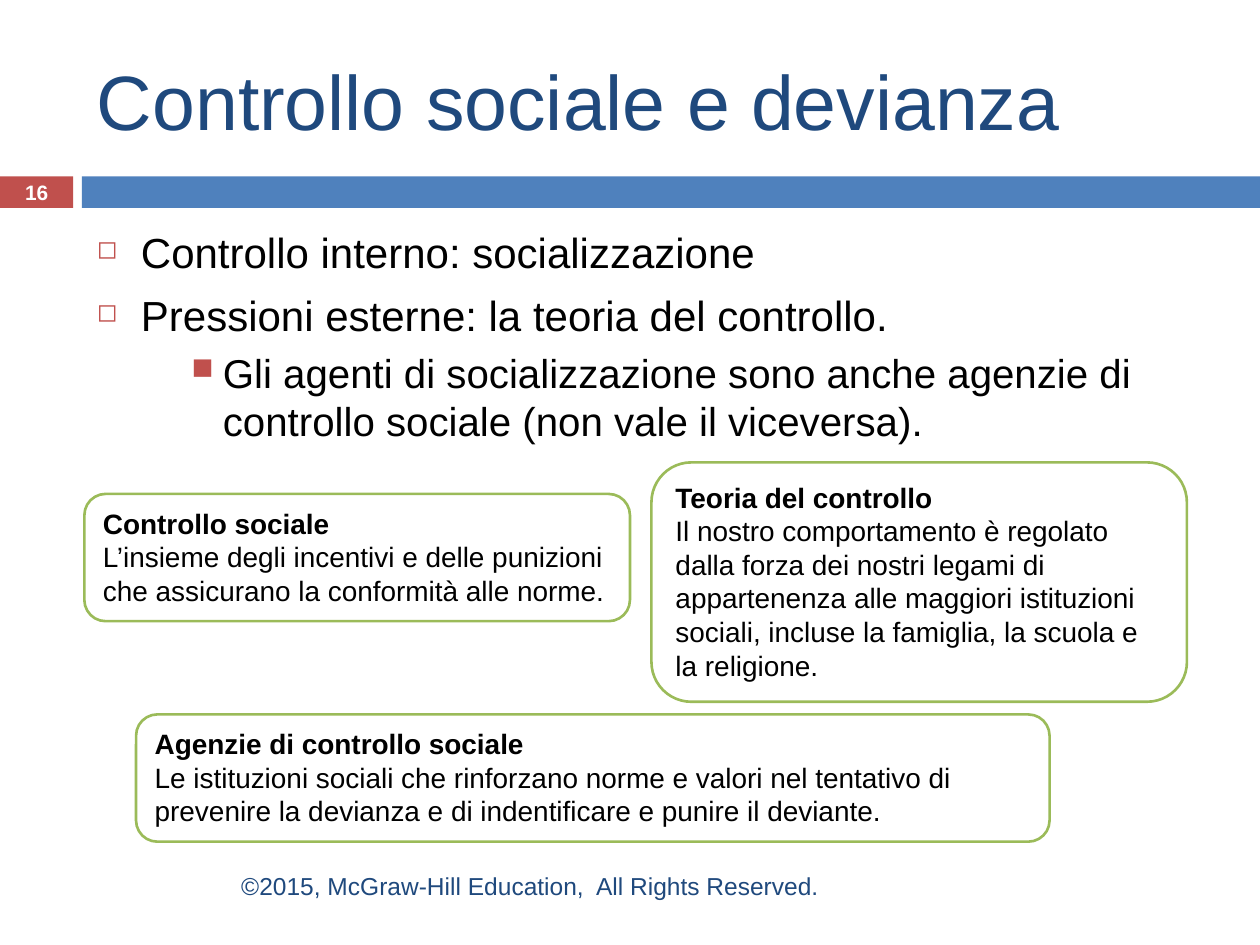
from lxml.etree import SubElement
from pptx import Presentation
from pptx.dml.color import RGBColor
from pptx.enum.shapes import MSO_SHAPE
from pptx.enum.text import MSO_ANCHOR, MSO_AUTO_SIZE, PP_ALIGN
from pptx.oxml.ns import qn
from pptx.util import Inches, Pt

COLORS = {
    "red": "C0504D",
    "blue": "4F81BD",
    "navy": "1F497D",
    "green": "9BBB59",
    "black": "000000",
    "white": "FFFFFF",
}

POINTS = [
    ("Controllo interno: socializzazione", 0),
    ("Pressioni esterne: la teoria del controllo.", 0),
    ("Gli agenti di socializzazione sono anche agenzie di controllo sociale "
     "(non vale il viceversa).", 2),
]

LEVELS = {
    0: {"left": 0.35, "hang": 0.35, "gap": 7, "mark": "◻", "scale": 60, "size": 24},
    2: {"left": 1, "hang": 0.25, "gap": 5, "mark": "■", "scale": 75, "size": 23},
}

CARDS = [
    ((0.67, 3.92, 4.33, 1.01), "Controllo sociale",
     "L’insieme degli incentivi e delle punizioni che assicurano la "
     "conformità alle norme."),
    ((1.08, 5.67, 7.25, 1.01), "Agenzie di controllo sociale",
     "Le istituzioni sociali che rinforzano norme e valori nel tentativo di "
     "prevenire la devianza e di indentificare e punire il deviante."),
    ((5.17, 3.67, 4.25, 1.9), "Teoria del controllo",
     "Il nostro comportamento è regolato dalla forza dei nostri legami di "
     "appartenenza alle maggiori istituzioni sociali, incluse la famiglia, "
     "la scuola e la religione."),
]


def color(name):
    return RGBColor.from_string(COLORS[name])


def style(para, size, tint, bold=False):
    for run in para.runs:
        run.font.name = "Arial"
        run.font.size = Pt(size)
        run.font.bold = bold
        run.font.color.rgb = color(tint)


def add_box(slide, area):
    frame = slide.shapes.add_textbox(*map(Inches, area)).text_frame
    frame.word_wrap = True
    return frame


def add_label(slide, area, text, size, tint, align=PP_ALIGN.LEFT, bold=False):
    frame = add_box(slide, area)
    frame.vertical_anchor = MSO_ANCHOR.MIDDLE
    frame.text = text
    para = frame.paragraphs[0]
    para.alignment = align
    style(para, size, tint, bold)


def add_shape(slide, kind, area, fill, line=None):
    shape = slide.shapes.add_shape(kind, *map(Inches, area))
    shape.shadow.inherit = False
    shape.fill.solid()
    shape.fill.fore_color.rgb = color(fill)
    if line:
        shape.line.color.rgb = color(line)
        shape.line.width = Pt(1.5)
    else:
        shape.line.fill.background()
    return shape


def add_mark(para, level):
    props = para._p.get_or_add_pPr()
    props.set("marL", str(Inches(level["left"])))
    props.set("indent", str(-Inches(level["hang"])))
    tint = SubElement(props, qn("a:buClr"))
    SubElement(tint, qn("a:srgbClr"), val=COLORS["red"])
    SubElement(props, qn("a:buSzPct"), val=str(level["scale"] * 1000))
    SubElement(props, qn("a:buChar"), char=level["mark"])


def add_points(slide, area):
    frame = add_box(slide, area)
    for i, (text, depth) in enumerate(POINTS):
        para = frame.add_paragraph() if i else frame.paragraphs[0]
        level = LEVELS[depth]
        para.text = text
        para.level = depth
        add_mark(para, level)
        if i:
            para.space_before = Pt(level["gap"])
        style(para, level["size"], "black")


def add_card(slide, area, title, text):
    shape = add_shape(slide, MSO_SHAPE.ROUNDED_RECTANGLE, area, "white", "green")
    frame = shape.text_frame
    frame.word_wrap = True
    frame.auto_size = MSO_AUTO_SIZE.SHAPE_TO_FIT_TEXT
    frame.vertical_anchor = MSO_ANCHOR.TOP
    frame.text = f"{title}\n{text}"
    for para, bold in zip(frame.paragraphs, (True, False)):
        para.alignment = PP_ALIGN.LEFT
        style(para, 16, "black", bold)


def main():
    deck = Presentation()
    deck.slide_width, deck.slide_height = Inches(10), Inches(7.5)
    slide = deck.slides.add_slide(deck.slide_layouts[6])
    add_shape(slide, MSO_SHAPE.RECTANGLE, (0, 1.4, 0.58, 0.25), "red")
    add_shape(slide, MSO_SHAPE.RECTANGLE, (0.65, 1.4, 9.35, 0.25), "blue")
    add_label(slide, (0.67, 0.25, 8.92, 1.08), "Controllo sociale e devianza",
              44, "navy")
    add_points(slide, (0.67, 1.75, 8.92, 4.92))
    add_label(slide, (0, 1.39, 0.58, 0.27), "16", 11.9, "white",
              PP_ALIGN.CENTER, True)
    for card in CARDS:
        add_card(slide, *card)
    add_label(slide, (0.67, 6.83, 5.93, 0.4),
              "©2015, McGraw-Hill Education,  All Rights Reserved.",
              14, "navy", PP_ALIGN.RIGHT)
    deck.save("out.pptx")


if __name__ == "__main__":
    main()
